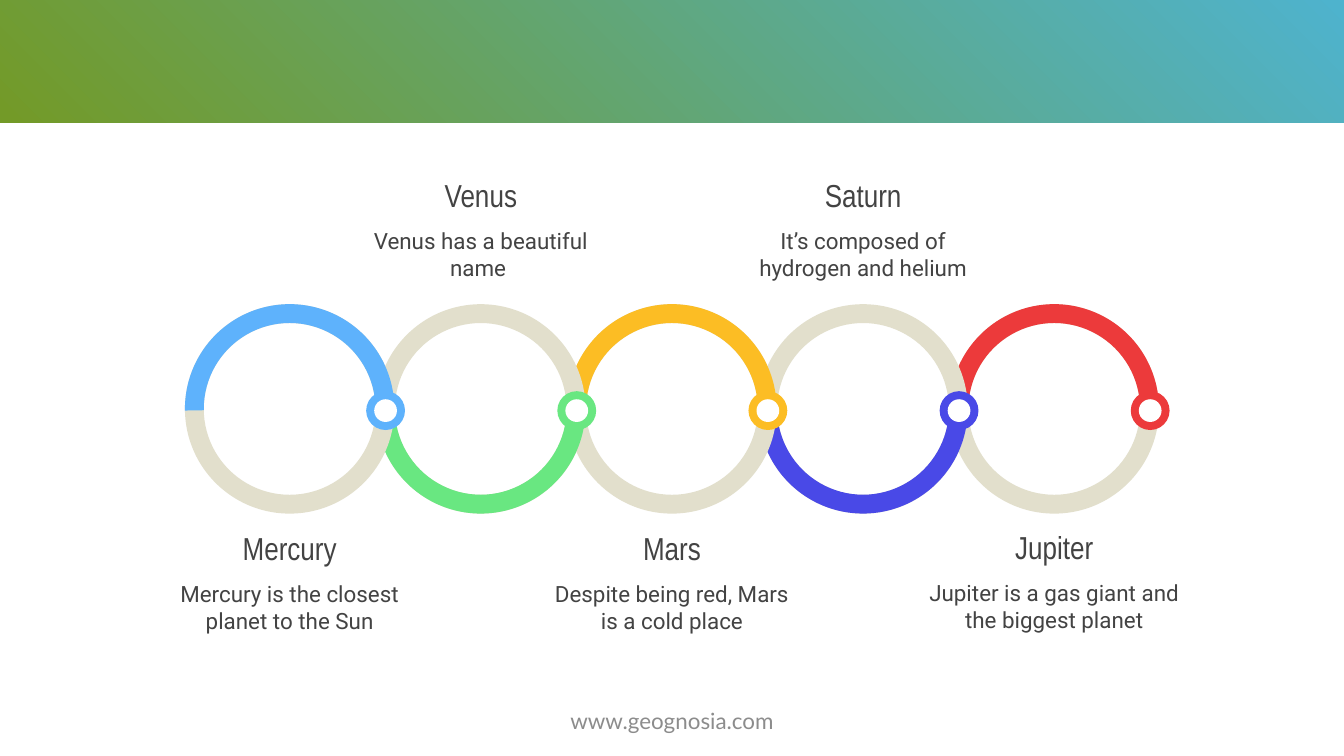
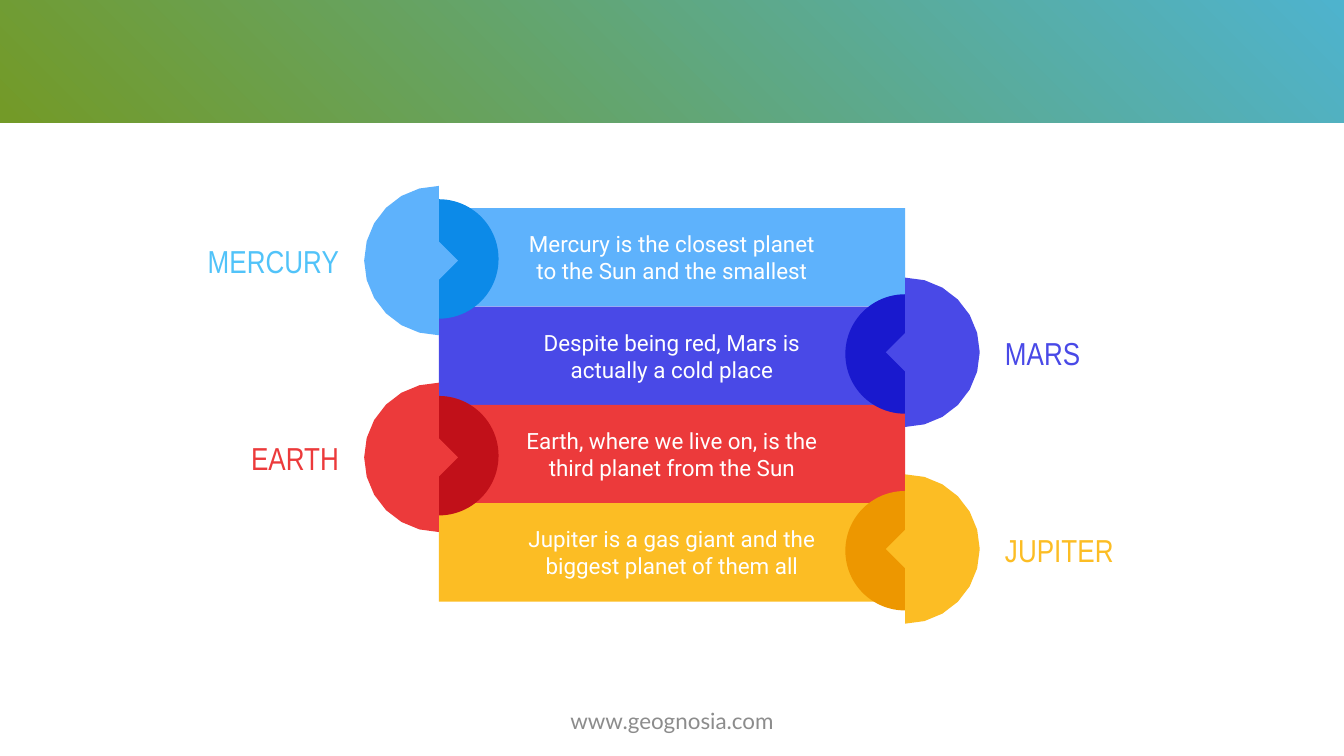
from dataclasses import dataclass
from math import cos, pi, sin
from typing import NamedTuple

from pptx import Presentation
from pptx.dml.color import RGBColor
from pptx.enum.shapes import MSO_SHAPE
from pptx.enum.text import MSO_ANCHOR, PP_ALIGN
from pptx.util import Pt


@dataclass(frozen=True)
class Theme:
    """Colours, fonts and type sizes shared by the slides."""
    band_from: str = "739A28"
    band_to: str = "4EB3CF"
    white: str = "FFFFFF"
    text: str = "434343"
    footer: str = "8C8C8C"
    track: str = "E2DFCC"
    sky: str = "5EB2FC"
    sky_dark: str = "0C8AE8"
    sky_label: str = "51C3F9"
    green: str = "69E781"
    yellow: str = "FCBD24"
    yellow_dark: str = "ED9700"
    blue: str = "4949E7"
    blue_dark: str = "1919CE"
    red: str = "EC3A3B"
    red_dark: str = "C11019"
    title_font: str = "Arial Narrow"
    body_font: str = "Roboto"
    footer_font: str = "Lato"
    title_size: int = 17
    body_size: int = 12


class Box(NamedTuple):
    """A rectangle in points."""
    x: float
    y: float
    w: float
    h: float

    def lengths(self):
        """Return the four sides as Pt lengths."""
        return [Pt(v) for v in self]


T = Theme()
PAGE = Box(0, 0, 720, 405)


def centred(cx, cy, size):
    """Return a square box around a centre."""
    return Box(cx - size / 2, cy - size / 2, size, size)


def paint(sp, color):
    """Give a shape a flat fill with no line or shadow."""
    sp.shadow.inherit = False
    sp.line.fill.background()
    sp.fill.solid()
    sp.fill.fore_color.rgb = RGBColor.from_string(color)
    return sp


def add_preset(shapes, kind, box, color):
    """Add a flat preset shape."""
    return paint(shapes.add_shape(kind, *box.lengths()), color)


def write(sp, text, font, size, color, align=PP_ALIGN.CENTER, inset=(7.2, 7.2)):
    """Write one wrapped, vertically centred paragraph in a shape."""
    tf = sp.text_frame
    tf.text = text
    tf.word_wrap = True
    tf.vertical_anchor = MSO_ANCHOR.MIDDLE
    tf.margin_left = tf.margin_right = Pt(inset[0])
    tf.margin_top = tf.margin_bottom = Pt(inset[1])
    p = tf.paragraphs[0]
    p.alignment = align
    for r in p.runs:
        r.font.name = font
        r.font.size = Pt(size)
        r.font.color.rgb = RGBColor.from_string(color)


def add_text(shapes, box, *args, **kwargs):
    """Add a text box."""
    write(shapes.add_textbox(*box.lengths()), *args, **kwargs)


def base_slide(prs):
    """Add a blank slide with the gradient band and the footer."""
    s = prs.slides.add_slide(prs.slide_layouts[6])
    band = add_preset(s.shapes, MSO_SHAPE.RECTANGLE,
                      Box(-3, -3.4, PAGE.w + 6, 69.2), T.band_from)
    band.fill.gradient()
    band.fill.gradient_angle = 45
    stops = zip(band.fill.gradient_stops, (T.band_from, T.band_to), (0.01, 1))
    for stop, color, position in stops:
        stop.color.rgb = RGBColor.from_string(color)
        stop.position = position
    add_text(s.shapes, Box(238.3, 375.1, 243.4, 21.6), "www.geognosia.com",
             T.footer_font, T.body_size, T.footer, inset=(7.2, 3.6))
    return s


def chain_link(s, box, pitch, upper, name, note, color, lift=0):
    """Draw a half-coloured ring in its box, with a joint and a caption opposite."""
    shapes = s.shapes.add_group_shape().shapes
    thickness = 10.1 / box.w
    ring = add_preset(shapes, MSO_SHAPE.DONUT, box, T.track)
    ring.adjustments[0] = thickness
    arc = add_preset(shapes, MSO_SHAPE.BLOCK_ARC, box, color)
    right_end, left_end = 0.55, 107.45
    arc.adjustments[0] = left_end if upper else right_end
    arc.adjustments[1] = right_end if upper else left_end
    arc.adjustments[2] = thickness
    cx, cy = box.x + box.w / 2, box.y + box.h / 2
    for size, fill in ((20.8, color), (12.2, T.white)):
        add_preset(shapes, MSO_SHAPE.OVAL,
                   centred(cx + pitch / 2 + 0.2, cy + 0.9, size), fill)
    width = 148.4
    x = cx - width / 2
    y = box.y + (113.6 if upper else -75.6) - lift
    add_text(shapes, Box(x, y, width, 33.8), name,
             T.title_font, T.title_size, T.text)
    add_text(shapes, Box(x, y + 27.6, width, 41.8), note,
             T.body_font, T.body_size, T.text)


def chain_slide(prs, planets):
    """Build the chain of rings, from right to left so that left ones lie on top."""
    s = base_slide(prs)
    pitch, size, middle = 102.4, 112.2, len(planets) // 2
    for i, planet in reversed(list(enumerate(planets))):
        box = centred(PAGE.w / 2 + (i - middle) * pitch, 219.1, size)
        chain_link(s, box, pitch, i % 2 == 0, *planet)


def half_disc(shapes, x, y, side, color):
    """Draw a half disc on an edge, with a pointer into the bar."""
    radius, notch, steps = 40, 10.3, 12
    angles = [pi * k / steps for k in range(steps + 1)]
    points = [(-side * radius * sin(a), -radius * cos(a)) for a in angles]
    points += [(0, notch), (side * notch, 0), (0, -notch)]
    start, *rest = [(Pt(x + dx), Pt(y + dy)) for dx, dy in points]
    builder = shapes.build_freeform(*start)
    builder.add_line_segments(rest, close=True)
    paint(builder.convert_to_shape(), color)


def bar(s, box, note, color):
    """Draw a bar with its sentence."""
    sp = add_preset(s.shapes, MSO_SHAPE.RECTANGLE, box, color)
    write(sp, note, T.body_font, T.body_size, T.white, inset=(43.2, 7.2))


def badge(s, box, on_left, name, color, dark, label_color):
    """Draw the badge and label beside the bar that fills the box."""
    shapes = s.shapes.add_group_shape().shapes
    side = 1 if on_left else -1
    edge = box.x if on_left else box.x + box.w
    mid = box.y + box.h / 2
    disc_y = mid + side * 1.8
    add_preset(shapes, MSO_SHAPE.OVAL, centred(edge, mid + side * 0.9, 64), dark)
    half_disc(shapes, edge, disc_y, side, color)
    gap, width, height = 46.4, 94.3, 20.9
    x = edge - gap - width if on_left else edge + gap
    add_text(shapes, Box(x, disc_y + 0.3 - height / 2, width, height), name,
             T.title_font, T.title_size, label_color,
             align=PP_ALIGN.RIGHT if on_left else PP_ALIGN.LEFT)


def bars_slide(prs, planets):
    """Build the stacked bars, then the badges on alternating sides."""
    s = base_slide(prs)
    width, height = 249.8, 52.7
    boxes = [Box((PAGE.w - width) / 2, 111.5 + i * height, width, height)
             for i in range(len(planets))]
    for box, (name, note, color, dark, label_color) in zip(boxes, planets):
        bar(s, box, note, color)
    for i, (name, note, color, dark, label_color) in enumerate(planets):
        badge(s, boxes[i], i % 2 == 0, name, color, dark, label_color)


def main():
    """Build and save the presentation."""
    prs = Presentation()
    prs.slide_width, prs.slide_height = Pt(PAGE.w), Pt(PAGE.h)
    chain_slide(prs, [
        ("Mercury", "Mercury is the closest planet to the Sun", T.sky),
        ("Venus", "Venus has a beautiful name ", T.green),
        ("Mars", "Despite being red, Mars is a cold place", T.yellow),
        ("Saturn", "It’s composed of hydrogen and helium", T.blue),
        ("Jupiter", "Jupiter is a gas giant and the biggest planet", T.red, 0.6),
    ])
    bars_slide(prs, [
        ("MERCURY", "Mercury is the closest planet to the Sun and the smallest",
         T.sky, T.sky_dark, T.sky_label),
        ("MARS", "Despite being red, Mars is actually a cold place",
         T.blue, T.blue_dark, T.blue),
        ("EARTH", "Earth, where we live on, is the third planet from the Sun",
         T.red, T.red_dark, T.red),
        ("JUPITER", "Jupiter is a gas giant and the biggest planet of them all",
         T.yellow, T.yellow_dark, T.yellow),
    ])
    prs.save("out.pptx")


if __name__ == "__main__":
    main()
